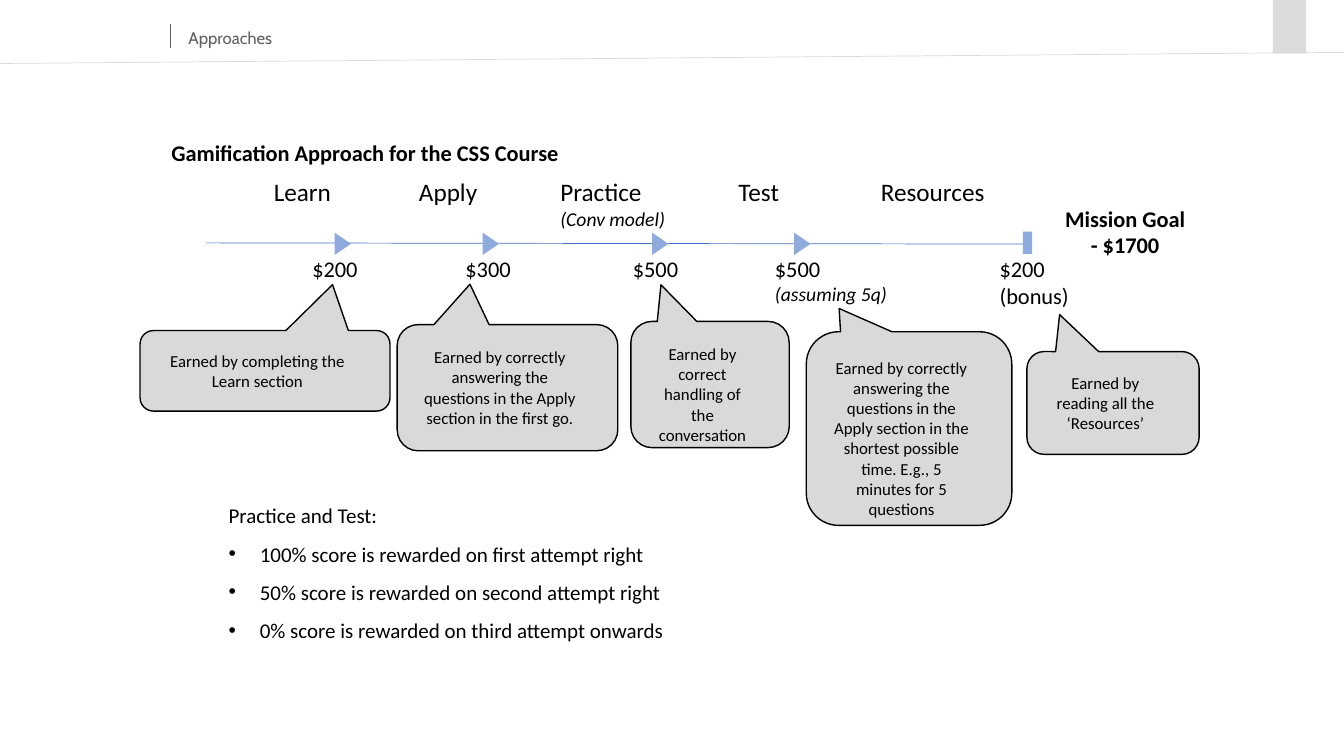
from lxml import etree
from pptx import Presentation
from pptx.dml.color import RGBColor
from pptx.enum.shapes import MSO_CONNECTOR, MSO_SHAPE
from pptx.enum.text import MSO_ANCHOR, PP_ALIGN
from pptx.oxml.ns import qn
from pptx.util import Cm, Pt

STRAIGHT = MSO_CONNECTOR.STRAIGHT
RECTANGLE = MSO_SHAPE.RECTANGLE
TRIANGLE = MSO_SHAPE.ISOSCELES_TRIANGLE
CALLOUT = MSO_SHAPE.ROUNDED_RECTANGULAR_CALLOUT
TOP = MSO_ANCHOR.TOP
LEFT, CENTER = PP_ALIGN.LEFT, PP_ALIGN.CENTER

COLORS = {
    "text": "000000",
    "header": "606060",
    "tab": "DBDBDB",
    "rule": "D9D9D9",
    "callout": "D9D9D9",
    "timeline": "4472C4",
    "marker": "8FAADC",
}
TEXT_MARGINS = (0.25, 0.13, 0.25, 0.13)
CALLOUT_MARGINS = (0.41, 0.41, 0.79, 0.41)

# Label left, label width, label, note below
STAGES = [
    (6.65, 2.36, "Learn", ""),
    (10.31, 2.29, "Apply", ""),
    (13.87, 4.06, "Practice", "(Conv model)"),
    (18.36, 2.29, "Test", ""),
    (21.95, 3.86, "Resources", ""),
]
ARROW_LEFTS = [8.36, 12.09, 16.36, 19.94]
# Left, width, amount, italic note
REWARDS = [
    (7.62, 2.36, "$200", ""),
    (11.48, 2.36, "$300", ""),
    (15.7, 2.36, "$500", ""),
    (19.28, 3.73, "$500 ", "(assuming 5q)"),
    (24.94, 2.36, "$200 (bonus)", ""),
]
# Place, pointer tip, text
CALLOUTS = [
    ((3.53, 8.33, 6.3, 2.03), (0.27, -1.07),
     "Earned by completing the Learn section"),
    ((10.01, 8.18, 5.56, 3.18), (-0.17, -0.82),
     "Earned by correctly answering the questions in the Apply section "
     "in the first go."),
    ((15.9, 8.1, 3.99, 3.18), (-0.31, -0.79),
     "Earned by correct handling of the conversation"),
    ((20.32, 8.36, 5.18, 4.88), (-0.34, -0.62),
     "Earned by correctly answering the questions in the Apply section "
     "in the shortest possible time. E.g., 5 minutes for 5 questions"),
    ((25.88, 8.86, 4.34, 2.59), (-0.31, -0.86),
     "Earned by reading all the ‘Resources’"),
]
SCORING = [
    "100% score is rewarded on first attempt right",
    "50% score is rewarded on second attempt right",
    "0% score is rewarded on third attempt onwards",
]


def color(name):
    return RGBColor.from_string(COLORS[name])


class SlideBuilder:
    """Holds the text style and the current slide; lengths are centimetres."""

    def __init__(self, slide, font="Calibri"):
        self.shapes = slide.shapes
        self.font = font

    def line(self, start, end, line_color):
        connector = self.shapes.add_connector(
            STRAIGHT, *(Cm(value) for value in start + end))
        connector.line.color.rgb = color(line_color)
        connector.line.width = Pt(0.5)
        etree.SubElement(connector._element.spPr, qn("a:effectLst"))

    def shape(self, kind, place, fill, outline=None):
        shape = self.shapes.add_shape(kind, *(Cm(value) for value in place))
        shape.shadow.inherit = False
        shape.fill.solid()
        shape.fill.fore_color.rgb = color(fill)
        if outline:
            shape.line.color.rgb = color(outline)
            shape.line.width = Pt(1)
        else:
            shape.line.fill.background()
        return shape

    def span(self, para, text, size, bold=False, italic=False,
             font=None, font_color="text"):
        run = para.add_run()
        run.text = text
        run.font.name = font or self.font
        run.font.size = Pt(size)
        run.font.bold = bold
        run.font.italic = italic
        run.font.color.rgb = color(font_color)

    def frame(self, box, align=LEFT, margins=TEXT_MARGINS):
        """Prepare a shape's text frame and return its first paragraph."""
        frame = box.text_frame
        frame.word_wrap = True
        frame.vertical_anchor = TOP
        (frame.margin_left, frame.margin_top,
         frame.margin_right, frame.margin_bottom) = map(Cm, margins)
        frame.paragraphs[0].alignment = align
        return frame.paragraphs[0]

    def text(self, place, text, size, align=LEFT, margins=TEXT_MARGINS, **style):
        box = self.shapes.add_textbox(*(Cm(value) for value in place))
        para = self.frame(box, align, margins)
        self.span(para, text, size, **style)
        return box.text_frame

    def callout(self, place, tip, text):
        box = self.shape(CALLOUT, place, "callout", outline="text")
        box.adjustments[0], box.adjustments[1] = tip
        self.span(self.frame(box, CENTER, CALLOUT_MARGINS), text, 12)

    def bullet_list(self, place, heading, items, size):
        frame = self.text(place, heading, size)
        for item in items:
            para = frame.add_paragraph()
            properties = para._p.get_or_add_pPr()
            properties.set("marL", str(Cm(0.79)))
            properties.set("indent", str(-Cm(0.79)))
            font = etree.SubElement(properties, qn("a:buFont"))
            font.set("typeface", "Arial")
            etree.SubElement(properties, qn("a:buChar")).set("char", "•")
            self.span(para, item, size)
        for para in frame.paragraphs:
            para.line_spacing = 1.07
            para.space_after = Pt(8)


def add_header(page):
    page.shape(RECTANGLE, (32.08, 0, 0.84, 1.35), "tab")
    page.line((33.87, 1.32), (0, 1.6), "rule")
    page.text((4.5, 0.58, 9.47, 0.76), "Approaches", 12,
              font="Cabin", font_color="header")
    page.line((4.29, 0.61), (4.29, 1.22), "header")


def add_timeline(page):
    page.line((5.18, 6.12), (25.78, 6.15), "timeline")
    for left, width, label, note in STAGES:
        frame = page.text((left, 4.32, width, 1.02), label, 18)
        if note:
            page.span(frame.add_paragraph(), note, 14, italic=True)
    for left in ARROW_LEFTS:
        page.shape(TRIANGLE, (left, 5.94, 0.56, 0.41), "marker").rotation = 90
    page.shape(RECTANGLE, (25.78, 5.84, 0.23, 0.56), "marker")
    for left, width, amount, note in REWARDS:
        frame = page.text((left, 6.3, width, 0.94), amount, 16)
        if note:
            page.span(frame.paragraphs[0], note, 14, italic=True)
    page.text((26.49, 5.03, 3.73, 1.63), "Mission Goal - $1700", 16,
              align=CENTER, bold=True)


def main():
    deck = Presentation()
    deck.slide_width, deck.slide_height = Cm(33.87), Cm(19.05)
    page = SlideBuilder(deck.slides.add_slide(deck.slide_layouts[6]))
    add_header(page)
    page.text((4.32, 3.51, 16.28, 0.97),
              "Gamification Approach for the CSS Course", 16,
              margins=(0, 0, 0, 0), bold=True)
    add_timeline(page)
    for place, tip, text in CALLOUTS:
        page.callout(place, tip, text)
    page.bullet_list((5.51, 12.5, 22, 3.84), "Practice and Test:", SCORING, 15)
    deck.save("out.pptx")


if __name__ == "__main__":
    main()
